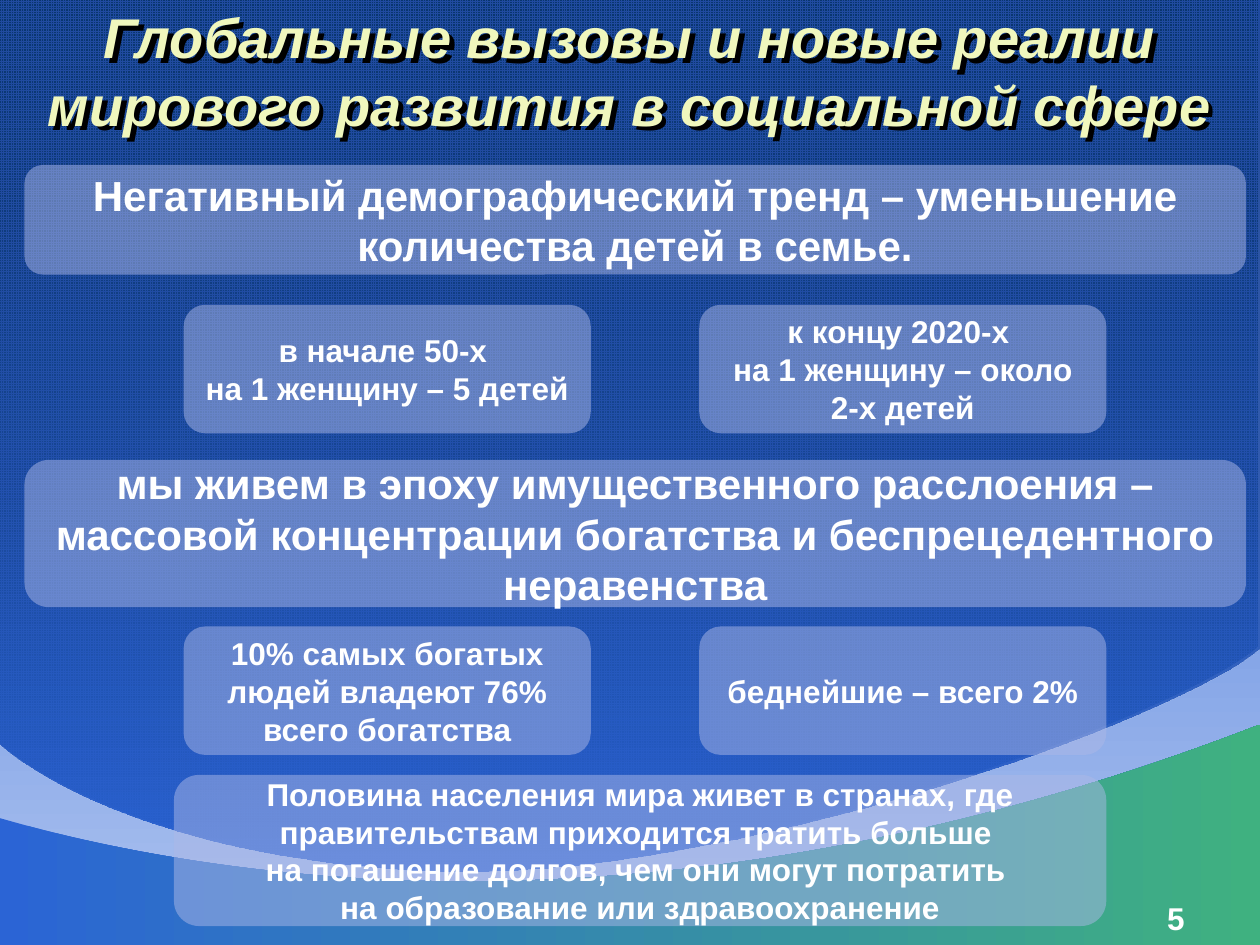
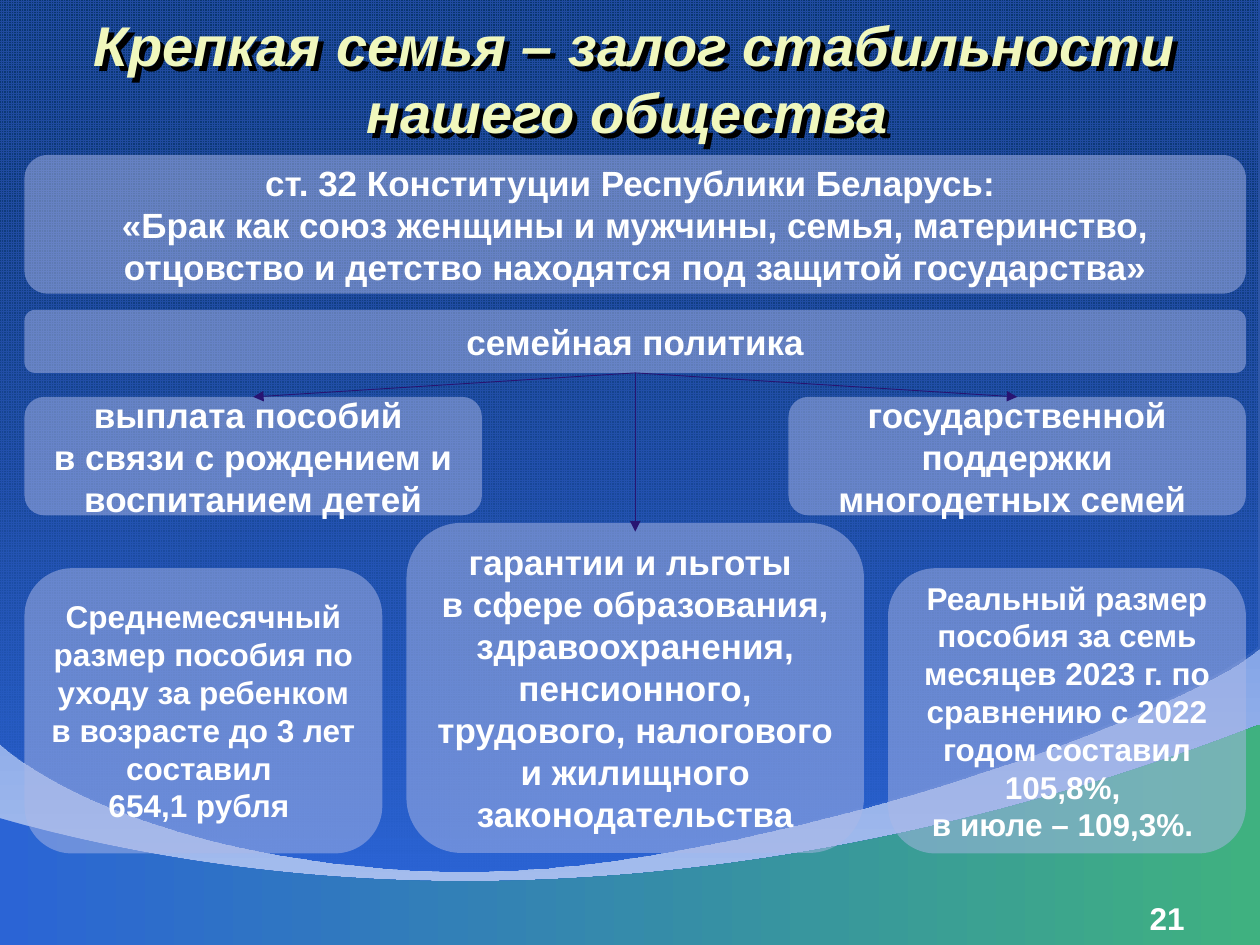
import dataclasses
import typing

import lxml.etree
import pptx
import pptx.dml.color
import pptx.dml.fill
import pptx.enum.dml
import pptx.enum.shapes
import pptx.enum.text
import pptx.oxml.ns
import pptx.shapes.autoshape
import pptx.shapes.base
import pptx.slide
import pptx.util

WIDTH, HEIGHT = 720, 540
FONT = "Arial"
WHITE, CREAM, BLACK = "FFFFFF", "F0F7BD", "000000"
BLUE, NAVY, DEEP = "2B64D5", "142E62", "003D7B"
PALE, GREEN, CARD_FILL, ARROW = "ACC2EF", "3FB180", "ACB8E7", "281472"
DOWNWARD, RIGHTWARD = 270, 0

Point = tuple[float, float]

# Edges of the two background areas: a start, then three points for each cubic curve
UPPER_EDGE: list[Point] = [(0, 424.8), (8.6, 433.4), (80.6, 490.3), (247, 497.5),
                           (414, 504.7), (673.9, 410.4), (720, 370)]
LOWER_EDGE: list[Point] = [(-1, 467.3), (7.9, 469.4), (92.9, 496.8), (219.6, 502.6),
                           (346.3, 508.3), (519.8, 491.8), (720, 414)]

# Column rules shared by the cards
LEFT, RIGHT = 14, 712
FULL = RIGHT - LEFT
PAIR_LEFT, PAIR_RIGHT, PAIR_WIDTH = 105, 399.6, 232.6
POLICY_WIDTH, FACT_WIDTH = 261.4, 204.5


@dataclasses.dataclass
class Card:
    left: float
    top: float
    width: float
    height: float
    text: str  # "\n" starts a paragraph, "\v" breaks a line
    size: float = 18


@dataclasses.dataclass
class Title:
    left: float
    top: float
    height: float
    text: str


def color(value: str) -> pptx.dml.color.RGBColor:
    return pptx.dml.color.RGBColor.from_string(value)


def child(parent: typing.Any, tag: str, **attributes: str) -> typing.Any:
    return lxml.etree.SubElement(parent, pptx.oxml.ns.qn(tag), attributes)


def set_gradient(fill: pptx.dml.fill.FillFormat, start: str, end: str, angle: float) -> None:
    fill.gradient()
    fill.gradient_angle = angle
    for stop, value in zip(fill.gradient_stops, (start, end)):
        stop.color.rgb = color(value)


def set_opacity(shape: pptx.shapes.base.BaseShape, percent: int) -> None:
    """Make the first colour of the shape's fill translucent."""
    first_color = shape.element.spPr.find(".//" + pptx.oxml.ns.qn("a:srgbClr"))
    child(first_color, "a:alpha", val=str(percent * 1000))


def write(shape: pptx.shapes.autoshape.Shape, text: str, size: float,
          align: pptx.enum.text.PP_ALIGN = pptx.enum.text.PP_ALIGN.CENTER,
          anchor: pptx.enum.text.MSO_ANCHOR = pptx.enum.text.MSO_ANCHOR.MIDDLE,
          ink: str = WHITE, italic: bool = False) -> None:
    frame = shape.text_frame
    frame.word_wrap = True
    frame.vertical_anchor = anchor
    for number, paragraph_text in enumerate(text.split("\n")):
        paragraph = frame.add_paragraph() if number else frame.paragraphs[0]
        paragraph.alignment = align
        for line_number, line in enumerate(paragraph_text.split("\v")):
            if line_number:
                paragraph.add_line_break()
            run = paragraph.add_run()
            run.text = line
            run.font.name = FONT
            run.font.size = pptx.util.Pt(size)
            run.font.bold = True
            run.font.italic = italic
            run.font.color.rgb = color(ink)


def box(left: float, top: float, width: float, height: float) -> list[pptx.util.Pt]:
    return [pptx.util.Pt(length) for length in (left, top, width, height)]


def add_area(slide: pptx.slide.Slide, edge: list[Point], far_side: float,
             shift: float = 0) -> pptx.shapes.autoshape.Shape:
    """Area between a curved edge and the slide's top or bottom."""
    outline = edge + [(edge[-1][0], far_side), (edge[0][0], far_side)]
    corners = [(pptx.util.Pt(x + shift), pptx.util.Pt(y + shift)) for x, y in outline]
    builder = slide.shapes.build_freeform(*corners[0])
    builder.add_line_segments(corners[1:], close=True)
    area = builder.convert_to_shape()

    # Join the edge's points, three at a time, into cubic curves
    segments = list(area.element.spPr.iter(pptx.oxml.ns.qn("a:lnTo")))[:len(edge) - 1]
    for first in range(0, len(segments), 3):
        curve = lxml.etree.Element(pptx.oxml.ns.qn("a:cubicBezTo"))
        segments[first].addprevious(curve)
        for segment in segments[first:first + 3]:
            curve.append(segment[0])
            segment.getparent().remove(segment)

    area.shadow.inherit = False
    area.line.fill.background()
    return area


def add_backdrop(slide: pptx.slide.Slide) -> None:
    grid = add_area(slide, UPPER_EDGE, 0, shift=-0.8)
    grid.fill.patterned()
    grid.fill.pattern = pptx.enum.dml.MSO_PATTERN.SMALL_GRID
    grid.fill.fore_color.rgb = color(BLUE)
    grid.fill.back_color.rgb = color(DEEP)

    veil = add_area(slide, UPPER_EDGE, 0)
    set_gradient(veil.fill, NAVY, BLUE, DOWNWARD)
    set_opacity(veil, 46)

    wave = add_area(slide, LOWER_EDGE, HEIGHT)
    set_gradient(wave.fill, BLUE, GREEN, RIGHTWARD)


def add_title(slide: pptx.slide.Slide, title: Title) -> None:
    heading = slide.shapes.add_textbox(*box(title.left, title.top, WIDTH, title.height))
    write(heading, title.text, 32, ink=CREAM, italic=True)
    effects = child(heading.element.spPr, "a:effectLst")
    shadow = child(effects, "a:outerShdw", blurRad="0", dist=str(pptx.util.Pt(4)),
                   dir="2700000", algn="tl")
    child(shadow, "a:srgbClr", val=BLACK)


def add_card(slide: pptx.slide.Slide, card: Card) -> pptx.shapes.autoshape.Shape:
    shape = slide.shapes.add_shape(pptx.enum.shapes.MSO_SHAPE.ROUNDED_RECTANGLE,
                                   *box(card.left, card.top, card.width, card.height))
    shape.shadow.inherit = False
    shape.line.fill.background()
    shape.fill.solid()
    shape.fill.fore_color.rgb = color(CARD_FILL)
    set_opacity(shape, 50)
    write(shape, card.text, card.size)
    return shape


def add_arrow(slide: pptx.slide.Slide, source: pptx.shapes.autoshape.Shape,
              target: pptx.shapes.autoshape.Shape, overlap: float = 0) -> None:
    """Arrow from the source's bottom to the target's top, or a little inside it."""
    tip = target.left + target.width // 2, target.top + pptx.util.Pt(overlap)
    arrow = slide.shapes.add_connector(pptx.enum.shapes.MSO_CONNECTOR.STRAIGHT,
                                       source.left + source.width // 2,
                                       source.top + source.height, *tip)
    arrow.begin_connect(source, 2)
    if not overlap:
        arrow.end_connect(target, 0)
    arrow.line.color.rgb = color(ARROW)
    arrow.line.width = pptx.util.Pt(0.5)
    child(arrow.element.spPr.find(pptx.oxml.ns.qn("a:ln")), "a:tailEnd", type="triangle")
    child(arrow.element.spPr, "a:effectLst")


def add_slide(deck: typing.Any, number: int, title: Title,
              cards: list[Card]) -> tuple[pptx.slide.Slide, list]:
    slide = deck.slides.add_slide(deck.slide_layouts[6])
    add_backdrop(slide)
    page = slide.shapes.add_textbox(*box(516.2, 510, 167.8, 19.4))
    write(page, str(number), 18, pptx.enum.text.PP_ALIGN.RIGHT, pptx.enum.text.MSO_ANCHOR.TOP)
    add_title(slide, title)
    return slide, [add_card(slide, card) for card in cards]


CHALLENGES = [
    Card(LEFT, 94.3, FULL, 62.6,
         "Негативный демографический тренд – уменьшение количества детей в семье.", 24),
    Card(PAIR_LEFT, 174.2, PAIR_WIDTH, 73.4, "в начале 50-х \vна 1 женщину – 5 детей"),
    Card(PAIR_RIGHT, 174.2, PAIR_WIDTH, 73.4,
         "к концу 2020-х \nна 1 женщину – около 2-х детей"),
    Card(LEFT, 262.8, FULL, 84.2,
         "мы живем в эпоху имущественного расслоения – массовой концентрации богатства "
         "и беспрецедентного неравенства", 24),
    Card(PAIR_LEFT, 358, PAIR_WIDTH, 73.4,
         "10% самых богатых людей владеют 76% всего богатства"),
    Card(PAIR_RIGHT, 358, PAIR_WIDTH, 73.4, "беднейшие – всего 2%"),
    Card(99.4, 442.8, 532.8, 86.4,
         "Половина населения мира живет в странах, где правительствам приходится тратить "
         "больше \vна погашение долгов, чем они могут потратить "
         "\vна образование или здравоохранение"),
]

FAMILY = [
    Card(LEFT, 88.6, FULL, 79.2,
         "ст. 32 Конституции Республики Беларусь: \n«Брак как союз женщины и мужчины, семья, "
         "материнство, отцовство и детство находятся под защитой государства»", 20),
    Card(LEFT, 177.1, FULL, 36, "семейная политика", 20),
    Card(LEFT, 226.8, POLICY_WIDTH, 67.7,
         "выплата пособий \vв связи с рождением и воспитанием детей", 20),
    Card(RIGHT - POLICY_WIDTH, 226.8, POLICY_WIDTH, 67.7,
         "государственной поддержки многодетных семей ", 20),
    Card((LEFT + RIGHT - POLICY_WIDTH) / 2, 298.8, POLICY_WIDTH, 188.6,
         "гарантии и льготы \vв сфере образования, здравоохранения, пенсионного, трудового, "
         "налогового и жилищного законодательства", 20),
    Card(LEFT, 324.7, FACT_WIDTH, 163,
         "Среднемесячный размер пособия по уходу за ребенком в возрасте до 3 лет составил "
         "\v654,1 рубля "),
    Card(RIGHT - FACT_WIDTH, 324.7, FACT_WIDTH, 163,
         "Реальный размер пособия за семь месяцев 2023 г. по сравнению с 2022 годом "
         "составил 105,8%, \vв июле – 109,3%. "),
]


def main() -> None:
    deck = pptx.Presentation()
    deck.slide_width, deck.slide_height = pptx.util.Pt(WIDTH), pptx.util.Pt(HEIGHT)
    set_gradient(deck.slide_master.background.fill, BLUE, PALE, DOWNWARD)

    # Global challenges
    add_slide(deck, 5, Title(0, 5.8, 68.4, "Глобальные вызовы и новые реалии мирового "
                                           "развития в социальной сфере"), CHALLENGES)

    # Family policy
    slide, shapes = add_slide(deck, 21, Title(2.9, 0, 88.6, "Крепкая семья – залог "
                                              "стабильности нашего общества "), FAMILY)
    _, policy, benefits, support, guarantees, *_ = shapes
    add_arrow(slide, policy, benefits)
    add_arrow(slide, policy, guarantees, overlap=5)
    add_arrow(slide, policy, support)

    deck.save("out.pptx")


if __name__ == "__main__":
    main()
